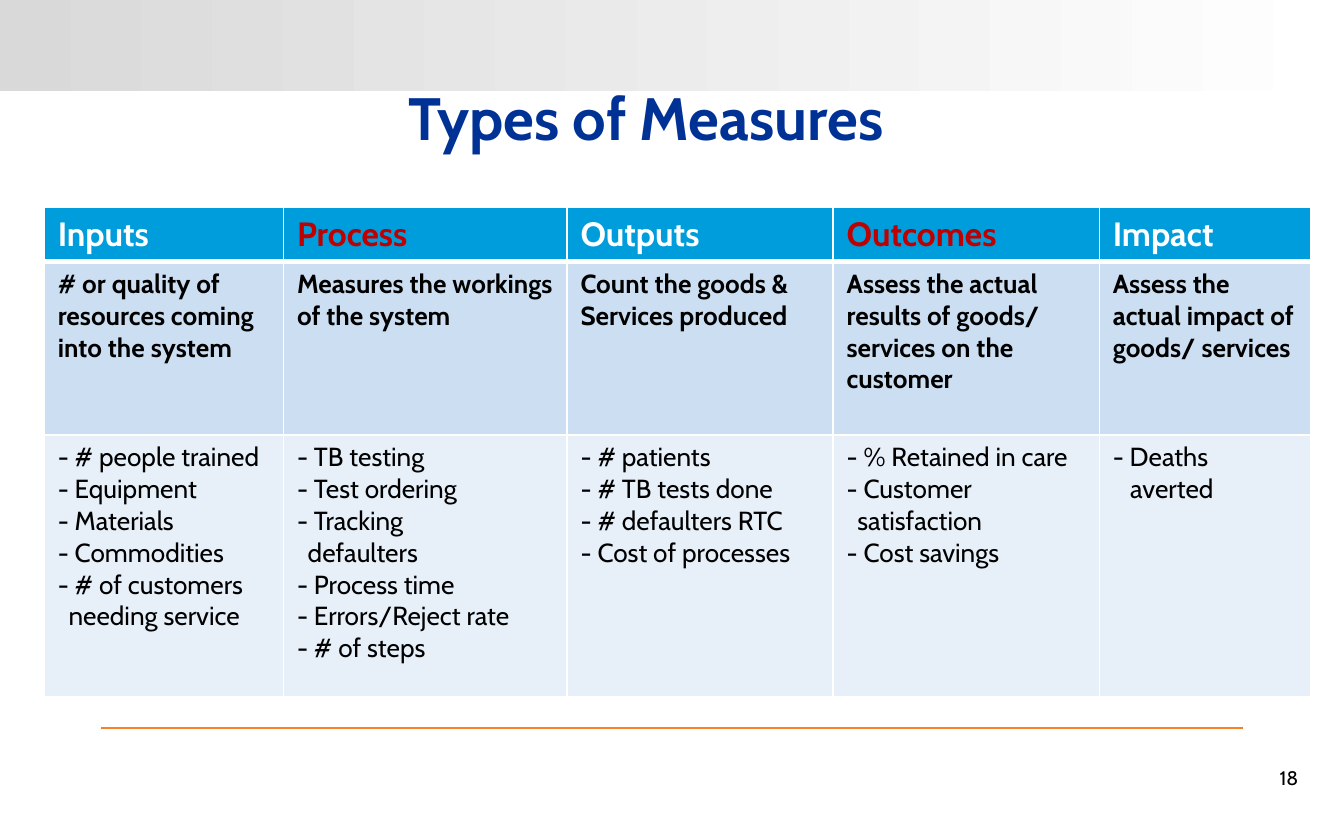
from lxml import etree
from pptx import Presentation
from pptx import util as u
from pptx.dml.color import RGBColor
from pptx.enum import shapes, text
from pptx.oxml import parse_xml
from pptx.oxml.ns import nsdecls, qn

FONT = "Cabin"
COLUMN_WIDTHS = [1.78, 2.11, 1.98, 1.98, 1.57]
ROW_HEIGHTS = [0.4, 1.29, 1.95]
ROW_FILLS = ["009DDC", "CCDFF2", "E7EFF9"]
MEASURES = [
    ("Inputs", "# or quality of resources coming into the system",
     "- # people trained\n- Equipment\n- Materials\n- Commodities\n- # of customers\nneeding service"),
    ("Process", "Measures the workings of the system",
     "- TB testing\n- Test ordering\n- Tracking\ndefaulters\n- Process time\n"
     "- Errors/Reject rate\n- # of steps"),
    ("Outputs", "Count the goods & Services produced",
     "- # patients\n- # TB tests done\n- # defaulters RTC\n- Cost of processes"),
    ("Outcomes", "Assess the actual results of goods/ services on the customer",
     "- % Retained in care\n- Customer\nsatisfaction\n- Cost savings"),
    ("Impact", "Assess the actual impact of goods/ services", "- Deaths\naverted"),
]
HIGHLIGHTED = {"Process", "Outcomes"}


def rgb(value):
    """Turn a hex string into a colour."""
    return RGBColor.from_string(value)


def format_text(frame, size, color, bold=False):
    """Apply one font style to every run of a text frame."""
    for paragraph in frame.paragraphs:
        for run in paragraph.runs:
            run.font.name = FONT
            run.font.size = u.Pt(size)
            run.font.bold = bold
            run.font.color.rgb = rgb(color)


def set_insets(frame):
    """Keep only the top and bottom insets of a text frame."""
    frame.margin_left = frame.margin_right = 0
    frame.margin_top = frame.margin_bottom = u.Inches(0.05)
    frame.word_wrap = True


def add_banner(slide):
    """Add the fading band along the top edge."""
    banner = slide.shapes.add_shape(
        shapes.MSO_SHAPE.RECTANGLE, 0, u.Inches(-0.02), u.Inches(10), u.Inches(0.7))
    banner.shadow.inherit = False
    banner.line.fill.background()
    banner.fill.gradient()
    banner.fill.gradient_angle = 0
    for stop, color in zip(banner.fill.gradient_stops, ["D9D9D9", "FFFFFF"]):
        stop.color.rgb = rgb(color)


def add_footer_rule(slide):
    """Add the thin orange line above the footer."""
    rule = slide.shapes.add_connector(
        shapes.MSO_CONNECTOR.STRAIGHT,
        u.Inches(0.75), u.Inches(5.42), u.Inches(9.25), u.Inches(5.42))
    rule.line.color.rgb = rgb("F58025")
    rule.line.width = u.Pt(1)
    etree.SubElement(rule._element.spPr, qn("a:effectLst"))


def set_title(slide, wording):
    """Fill and place the title placeholder."""
    title = slide.shapes.title
    title.left, title.top = u.Inches(3.04), u.Inches(0.63)
    title.width, title.height = u.Inches(4), u.Inches(0.51)
    frame = title.text_frame
    frame.text = wording
    set_insets(frame)
    frame.auto_size = text.MSO_AUTO_SIZE.NONE
    frame.vertical_anchor = text.MSO_ANCHOR.TOP
    heading = frame.paragraphs[0]
    heading.alignment = text.PP_ALIGN.LEFT
    heading.line_spacing = 0.85
    heading.space_after = u.Pt(12)
    format_text(frame, 32, "003296", bold=True)


def set_borders(cell, bottom):
    """Draw white borders around a cell."""
    properties = cell._tc.get_or_add_tcPr()
    for side, width in [("L", 1), ("R", 1), ("T", 1), ("B", bottom)]:
        properties.append(parse_xml(
            f'<a:ln{side} {nsdecls("a")} w="{u.Pt(width)}"><a:solidFill>'
            f'<a:srgbClr val="FFFFFF"/></a:solidFill></a:ln{side}>'))


def indent_continuations(frame, indent):
    """Indent the lines that carry on the dashed item above."""
    for paragraph in frame.paragraphs:
        if not paragraph.text.startswith("-"):
            paragraph._p.get_or_add_pPr().set("marL", str(u.Inches(indent)))


def fill_cell(cell, wording, row):
    """Write and style one cell by its row."""
    set_borders(cell, 3 if row == 0 else 1)
    cell.fill.solid()
    cell.fill.fore_color.rgb = rgb(ROW_FILLS[row])
    cell.text_frame.text = wording
    if row == 0:
        color = "C00000" if wording in HIGHLIGHTED else "FFFFFF"
        format_text(cell.text_frame, 18, color, bold=True)
    else:
        format_text(cell.text_frame, 14, "000000", bold=row == 1)
    if row == 2:
        indent_continuations(cell.text_frame, 0.13 if "Deaths" in wording else 0.08)


def add_measures(slide):
    """Add the table with one column per type of measure."""
    table = slide.shapes.add_table(
        len(ROW_HEIGHTS), len(MEASURES), u.Inches(0.33), u.Inches(1.54),
        u.Inches(sum(COLUMN_WIDTHS)), u.Inches(sum(ROW_HEIGHTS))).table
    for row, height in zip(table.rows, ROW_HEIGHTS):
        row.height = u.Inches(height)
    for index, (width, measure) in enumerate(zip(COLUMN_WIDTHS, MEASURES)):
        table.columns[index].width = u.Inches(width)
        for row, wording in enumerate(measure):
            fill_cell(table.cell(row, index), wording, row)


def add_page_number(slide, number):
    """Add the page number at the lower right."""
    frame = slide.shapes.add_textbox(
        u.Inches(7.41), u.Inches(5.63), u.Inches(2.25), u.Inches(0.33)).text_frame
    frame.text = number
    set_insets(frame)
    frame.vertical_anchor = text.MSO_ANCHOR.MIDDLE
    frame.paragraphs[0].alignment = text.PP_ALIGN.RIGHT
    frame.paragraphs[0].line_spacing = 0.9
    format_text(frame, 10.5, "000000")


def main():
    """Build the slide and save it."""
    deck = Presentation()
    deck.slide_width, deck.slide_height = u.Inches(10), u.Inches(6.25)
    slide = deck.slides.add_slide(deck.slide_layouts[5])
    add_banner(slide)
    add_footer_rule(slide)
    set_title(slide, "Types of Measures")
    add_measures(slide)
    add_page_number(slide, "18")
    deck.save("out.pptx")


if __name__ == "__main__":
    main()
